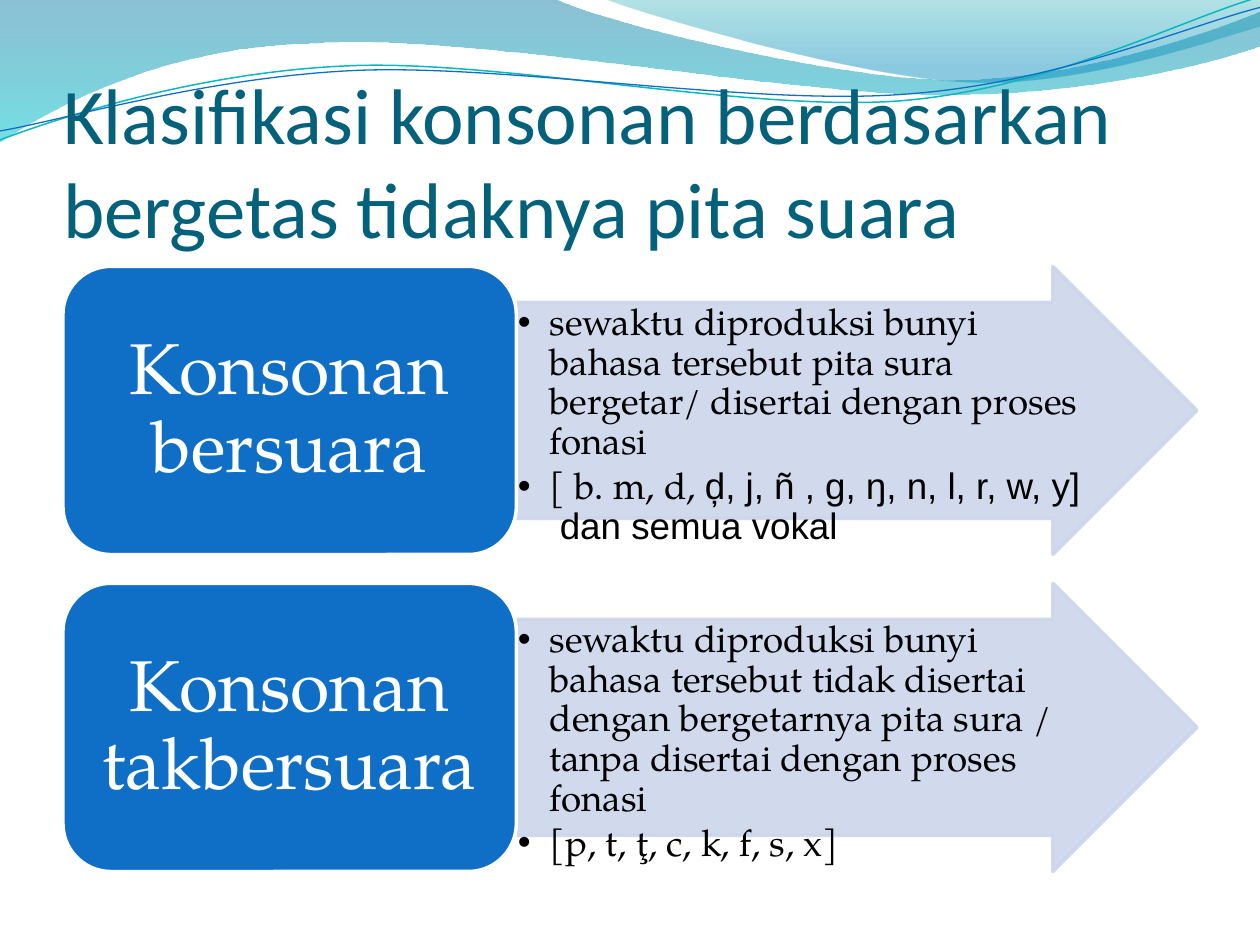
"""Build a slide that contrasts voiced and voiceless consonants."""
import pptx
import pptx.dml.color
import pptx.enum.shapes
import pptx.enum.text
import pptx.oxml.ns
import pptx.util
from lxml import etree

Cm, Pt = pptx.util.Cm, pptx.util.Pt
qn = pptx.oxml.ns.qn
SHAPE = pptx.enum.shapes.MSO_SHAPE
ALIGN = pptx.enum.text.PP_ALIGN
ANCHOR = pptx.enum.text.MSO_ANCHOR

COLORS = {
    "title": "04617B", "blue": "0F6FC6", "arrow": "CCD5EA", "teal": "0AB8BF",
    "white": "FFFFFF", "black": "000000", "deep": "0074A1", "aqua": "00C6CF",
    "sea": "00A1A9", "sky": "008BBF",
}
BODY_FONT = "TeX Gyre Pagella"

BANDS = [
    ([(0, 0), (11.18, -0.03),
      (12.09, 0.43, 16.87, 1.6, 19.25, 1.6), (21.67, 1.6, 24.33, 0.66, 25.4, 0.23),
      (25.43, 0.91), (24.97, 1.12, 22.1, 1.93, 18.95, 1.91),
      (15.8, 1.91, 9.7, 0.71, 6.53, 0.86), (3.28, 0.91, 1.17, 2.11, -0.03, 2.87),
      (0, 0)],
     [(0, "deep", 45), (1, "aqua", 55)]),
    ([(12.17, -0.03), (12.93, 0.28, 17.32, 1.57, 19.53, 1.65),
      (21.74, 1.75, 24.41, 0.81, 25.4, 0.53), (25.4, 0), (12.17, -0.03)],
     [(0, "sea", 30), (0.8, "sky", 45)]),
]
STRANDS = [
    ([(-0.05, 2.22), (1.19, 1.82, 4.02, 1.04, 7.05, 1.06),
      (10.05, 1.07, 15.02, 2.37, 18.08, 2.29), (21.13, 2.2, 23.86, 0.91, 25.41, 0.55)],
     "teal", 0.85),
    ([(-0.04, 2.04), (1.16, 1.9, 4.17, 1.15, 7.2, 1.16),
      (10.25, 1.18, 15.13, 2.25, 18.19, 2.16), (21.22, 2.1, 23.93, 1.06, 25.45, 0.75)],
     "blue", 0.75),
]
ROWS = [
    ("Konsonan bersuara", [
        [("sewaktu diproduksi bunyi bahasa tersebut pita sura bergetar/ "
          "disertai dengan proses fonasi", BODY_FONT)],
        [("[ b. m, d, ", BODY_FONT),
         ("ḑ, j, ñ , g, ŋ, n, l, r, w, y]  dan semua vokal", "Arial")]]),
    ("Konsonan takbersuara", [
        [("sewaktu diproduksi bunyi bahasa tersebut tidak disertai dengan "
          "bergetarnya pita sura / tanpa disertai dengan proses fonasi", BODY_FONT)],
        [("[p, t, ţ, c, k, f, s, x]", BODY_FONT)]]),
]


class Deck:
    """Hold the style and the current slide."""

    def __init__(self):
        """Start a presentation with one title-only slide."""
        self.prs = pptx.Presentation()
        self.prs.slide_width, self.prs.slide_height = Cm(25.4), Cm(19.05)
        self.s = self.prs.slides.add_slide(self.prs.slide_layouts[5])

    def rgb(self, name):
        """Return a named colour."""
        return pptx.dml.color.RGBColor.from_string(COLORS[name])

    def set_alpha(self, parent, percents):
        """Give the colours under an element their opacities."""
        for clr, pct in zip(parent.iter(qn("a:srgbClr")), percents):
            etree.SubElement(clr, qn("a:alpha")).set("val", str(pct * 1000))

    def outline(self, path, close):
        """Add a freeform of lines and cubic curves without a shadow."""
        points = [(Cm(seg[-2]), Cm(seg[-1])) for seg in path]
        builder = self.s.shapes.build_freeform(*points[0])
        builder.add_line_segments(points[1:], close=close)
        sp = builder.convert_to_shape()
        sp.shadow.inherit = False
        for line, seg in zip(list(sp.element.iter(qn("a:lnTo"))), path[1:]):
            if len(seg) == 6:
                curve = etree.Element(qn("a:cubicBezTo"))
                for x, y in zip(seg[::2], seg[1::2]):
                    etree.SubElement(curve, qn("a:pt"), x=str(Cm(x) - sp.left),
                                     y=str(Cm(y) - sp.top))
                line.getparent().replace(line, curve)
        return sp

    def band(self, path, stops):
        """Add a wave with a translucent gradient."""
        sp = self.outline(path, True)
        sp.line.fill.background()
        sp.fill.gradient()
        sp.fill.gradient_angle = 270
        for stop, (pos, color, _) in zip(sp.fill.gradient_stops, stops):
            stop.position = pos
            stop.color.rgb = self.rgb(color)
        self.set_alpha(sp.element.spPr, [alpha for _, _, alpha in stops])

    def strand(self, path, color, width):
        """Add a thin, slightly turned curved line."""
        sp = self.outline(path, False)
        sp.rotation = 357.3
        sp.fill.background()
        sp.line.color.rgb = self.rgb(color)
        sp.line.width = Pt(width)

    def title(self, text):
        """Fill, place and raise the title placeholder."""
        sp = self.s.shapes.title
        sp.element.getparent().append(sp.element)
        sp.left, sp.top, sp.width, sp.height = Cm(1.27), Cm(0.91), Cm(22.86), Cm(4.22)
        tf = self.frame(sp, ANCHOR.BOTTOM, 0, 0)
        tf.margin_top = Cm(0.13)
        p = tf.paragraphs[0]
        p.text = text
        p.alignment = ALIGN.LEFT
        self.font(p, "Calibri", 45, "title")

    def frame(self, sp, anchor, side, edge):
        """Set up and return the text frame of a shape."""
        tf = sp.text_frame
        tf.word_wrap = True
        tf.auto_size = pptx.enum.text.MSO_AUTO_SIZE.NONE
        tf.vertical_anchor = anchor
        tf.margin_left = tf.margin_right = Cm(side)
        tf.margin_top = tf.margin_bottom = Cm(edge)
        return tf

    def font(self, p, name, size, color):
        """Set the font of a paragraph."""
        p.font.name, p.font.size = name, Pt(size)
        p.font.color.rgb = self.rgb(color)

    def block(self, kind, left, top, width, fill, line):
        """Add a filled and outlined preset shape."""
        sp = self.s.shapes.add_shape(kind, Cm(left), Cm(top), Cm(width), Cm(5.81))
        sp.shadow.inherit = False
        sp.fill.solid()
        sp.fill.fore_color.rgb = self.rgb(fill)
        sp.line.color.rgb = self.rgb(line)
        sp.line.width = Pt(2)
        return sp

    def arrow(self, top, items):
        """Add an arrow that holds bulleted paragraphs."""
        sp = self.block(SHAPE.RIGHT_ARROW, 10.41, top, 13.72, "arrow", "arrow")
        sp.adjustments[0], sp.adjustments[1] = 0.75, 0.5
        self.set_alpha(sp.element.spPr, (90, 90))
        tf = self.frame(sp, ANCHOR.TOP, 0.03, 0.03)
        for i, runs in enumerate(items):
            p = tf.add_paragraph() if i else tf.paragraphs[0]
            p.alignment, p.line_spacing, p.space_after = ALIGN.LEFT, 0.9, Pt(3)
            self.font(p, BODY_FONT, 21, "black")
            pPr = p._p.get_or_add_pPr()
            pPr.set("marL", str(Cm(0.64)))
            pPr.set("indent", str(-Cm(0.64)))
            for tag, attrs in (("a:buFont", {"typeface": "Arial"}),
                               ("a:buChar", {"char": "•"})):
                pPr.find(qn("a:defRPr")).addprevious(etree.Element(qn(tag), attrs))
            for text, name in runs:
                r = p.add_run()
                r.text, r.font.name = text, name

    def label(self, top, text):
        """Add a rounded box with a large centred label."""
        sp = self.block(SHAPE.ROUNDED_RECTANGLE, 1.27, top, 9.14, "blue", "white")
        p = self.frame(sp, ANCHOR.MIDDLE, 0.43, 0.22).paragraphs[0]
        p.text = text
        p.alignment, p.line_spacing = ALIGN.CENTER, 0.9
        self.font(p, BODY_FONT, 41, "white")


def main():
    """Build and save the slide."""
    deck = Deck()
    for path, stops in BANDS:
        deck.band(path, stops)
    for path, color, width in STRANDS:
        deck.strand(path, color, width)
    deck.title("Klasifikasi konsonan berdasarkan bergetas tidaknya pita suara")
    for i, (name, items) in enumerate(ROWS):
        top = 5.37 + i * 6.39
        deck.arrow(top, items)
        deck.label(top, name)
    deck.prs.save("out.pptx")


if __name__ == "__main__":
    main()
